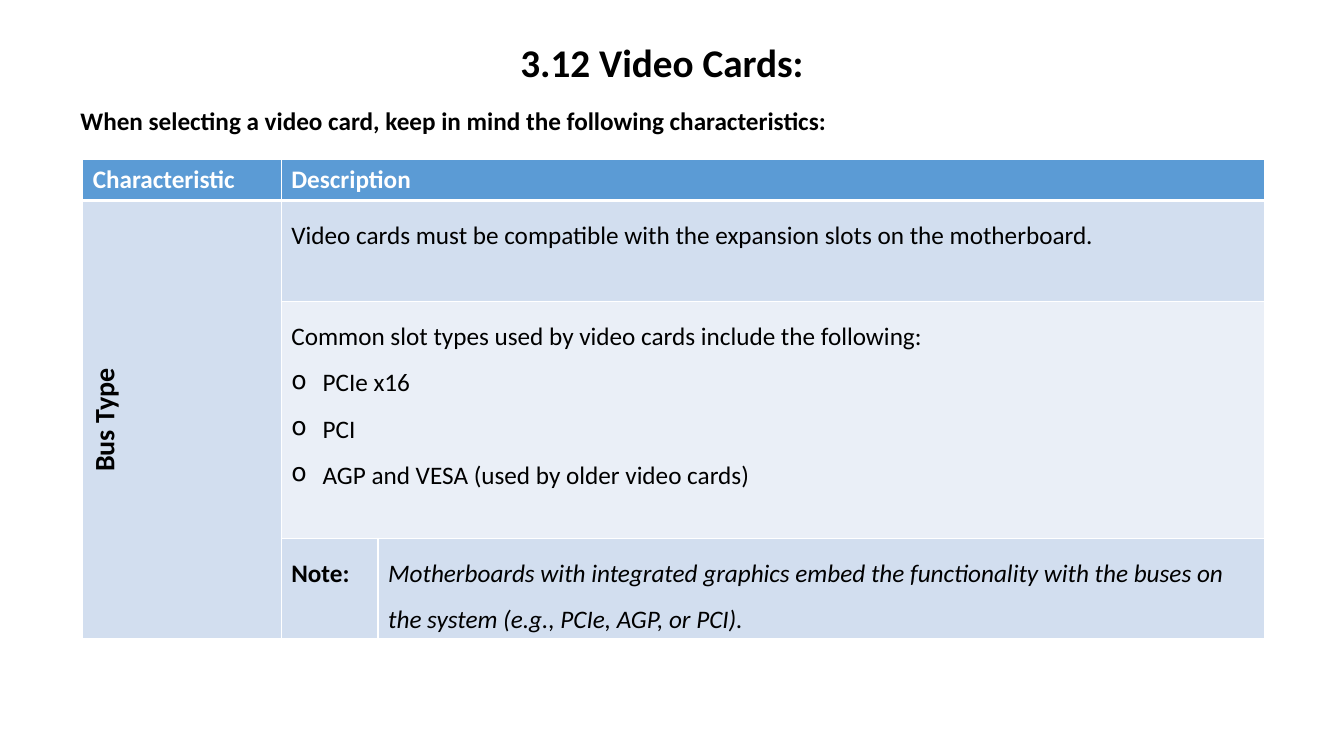
from lxml import etree
from pptx import Presentation
from pptx.dml.color import RGBColor
from pptx.enum.text import MSO_ANCHOR, MSO_AUTO_SIZE, PP_ALIGN
from pptx.oxml.ns import qn
from pptx.util import Inches, Pt

BLACK = RGBColor(0x00, 0x00, 0x00)
WHITE = RGBColor(0xFF, 0xFF, 0xFF)
HEADER = RGBColor(0x5B, 0x9B, 0xD5)
BAND = RGBColor(0xD2, 0xDE, 0xEF)
LIGHT = RGBColor(0xEA, 0xEF, 0xF7)


def write(p, text, **extra):
    r = p.add_run()
    r.text = text
    fmt = {"name": "Calibri", "size": Pt(18), "bold": False, "italic": False, **extra}
    color = fmt.pop("color", BLACK)
    for key, value in fmt.items():
        setattr(r.font, key, value)
    r.font.color.rgb = color


def add_border(cell, side, width):
    ln = etree.SubElement(cell._tc.get_or_add_tcPr(), qn(f"a:{side}"), w=str(Pt(width)))
    fill = etree.SubElement(ln, qn("a:solidFill"))
    etree.SubElement(fill, qn("a:srgbClr"), val=str(WHITE))


prs = Presentation()
prs.slide_width, prs.slide_height = Inches(13.33), Inches(7.5)
s = prs.slides.add_slide(prs.slide_layouts[5])

# Title
title = s.shapes.title
title.left, title.top, title.width, title.height = map(Inches, (5.04, 0.33, 3.05, 0.57))
tf = title.text_frame
tf.auto_size = MSO_AUTO_SIZE.NONE
tf.word_wrap = False
tf.vertical_anchor = MSO_ANCHOR.TOP
p = tf.paragraphs[0]
p.alignment = PP_ALIGN.CENTER
write(p, "3.12 Video Cards:", size=Pt(28), bold=True)

# Introduction
sp = s.shapes.add_textbox(Inches(0.7), Inches(1), Inches(12.14), Inches(0.71))
tf = sp.text_frame
tf.word_wrap = True
write(tf.paragraphs[0], "When selecting a video card, keep in mind the following characteristics:",
      bold=True)

# Table grid
table = s.shapes.add_table(4, 3, Inches(0.82), Inches(1.58),
                           Inches(11.72), Inches(4.76)).table
for column, width in zip(table.columns, (1.97, 0.96, 8.79)):
    column.width = Inches(width)
for row, height in zip(table.rows, (0.41, 1.0, 2.35, 1.0)):
    row.height = Inches(height)

# Borders and fills
for i, fill in enumerate((HEADER, BAND, LIGHT, BAND)):
    for j in range(3):
        cell = table.cell(i, j)
        widths = {"lnL": 1, "lnR": 1, "lnT": 3 if i == 1 else 1, "lnB": 3 if i == 0 else 1}
        for side, width in widths.items():
            add_border(cell, side, width)
        cell.fill.solid()
        cell.fill.fore_color.rgb = BAND if i and j == 0 else fill

# Merged cells
for i in range(3):
    table.cell(i, 1).merge(table.cell(i, 2))
table.cell(1, 0).merge(table.cell(3, 0))

# Header row
for j, text in enumerate(("Characteristic", "Description")):
    write(table.cell(0, j).text_frame.paragraphs[0], text, bold=True, color=WHITE)

# Rotated row label
cell = table.cell(1, 0)
cell.vertical_anchor = MSO_ANCHOR.MIDDLE
cell._tc.get_or_add_tcPr().set("vert", "vert270")
p = cell.text_frame.paragraphs[0]
p.alignment = PP_ALIGN.CENTER
write(p, "Bus Type", size=Pt(20), bold=True)

# Descriptions
descriptions = [
    (1, 1, "Video cards must be compatible with the expansion slots on the motherboard.", {}),
    (2, 1, "Common slot types used by video cards include the following:", {}),
    (3, 1, "Note:", {"bold": True}),
    (3, 2, "Motherboards with integrated graphics embed the functionality with the buses on "
           "the system (e.g., PCIe, AGP, or PCI).", {"italic": True}),
]
for i, j, text, extra in descriptions:
    p = table.cell(i, j).text_frame.paragraphs[0]
    p.line_spacing = 1.5
    write(p, text, **extra)

# Slot types
for text in ("PCIe x16", "PCI", "AGP and VESA (used by older video cards)"):
    p = table.cell(2, 1).text_frame.add_paragraph()
    p.line_spacing = 1.5
    pPr = p._p.get_or_add_pPr()
    pPr.set("marL", str(Inches(0.31)))
    pPr.set("indent", str(-Inches(0.31)))
    etree.SubElement(pPr, qn("a:buChar"), char="o")
    write(p, text)

prs.save("out.pptx")
